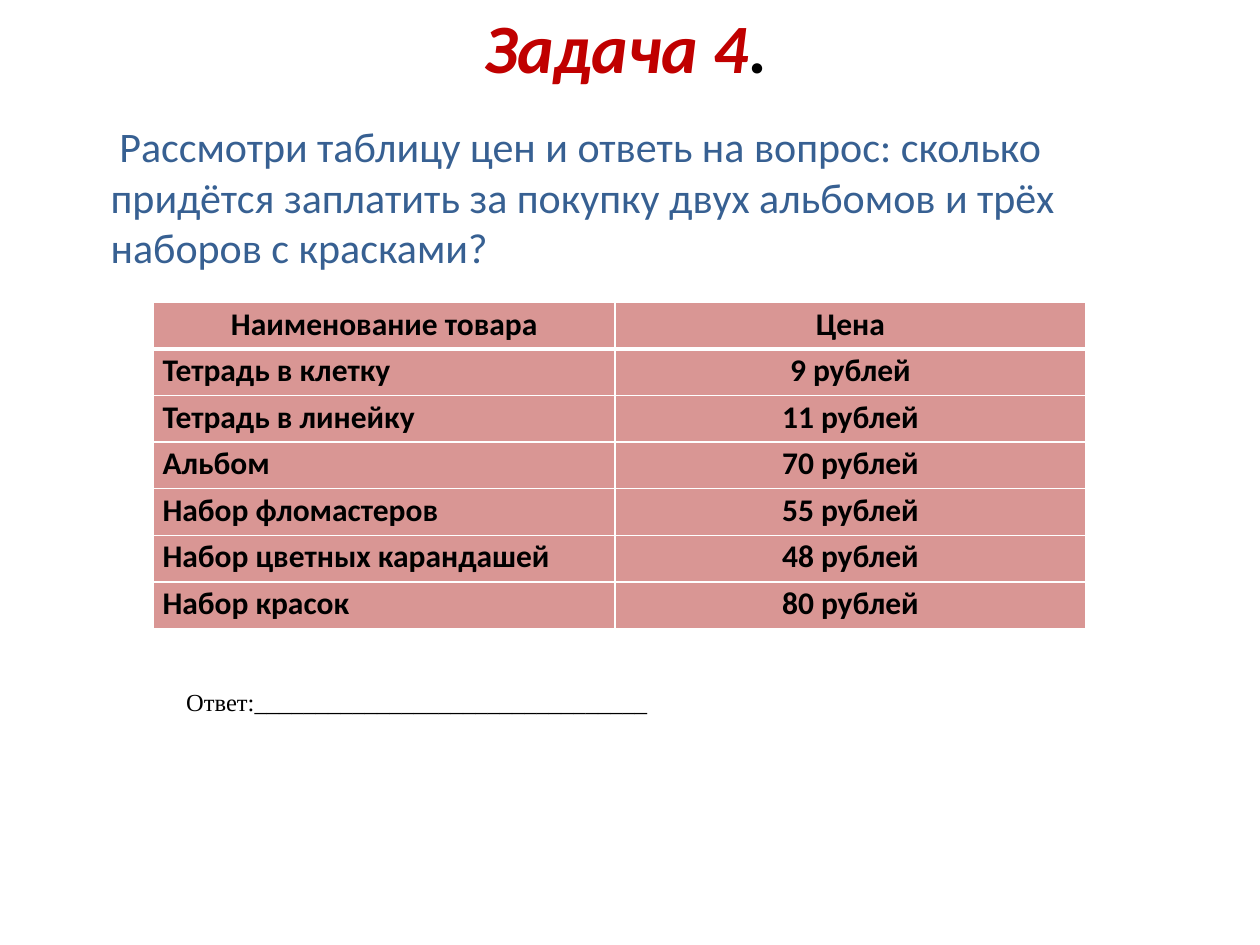
"""Build the price table task slide."""
from typing import Any, NamedTuple

from lxml import etree
from pptx import Presentation
from pptx.dml.color import RGBColor
from pptx.enum.text import MSO_ANCHOR, PP_ALIGN
from pptx.oxml.ns import qn
from pptx.util import Inches, Pt

LEFT, CENTER = PP_ALIGN.LEFT, PP_ALIGN.CENTER
TOP, MIDDLE = MSO_ANCHOR.TOP, MSO_ANCHOR.MIDDLE
BLACK = RGBColor(0x00, 0x00, 0x00)
WHITE = RGBColor(0xFF, 0xFF, 0xFF)
RED = RGBColor(0xC0, 0x00, 0x00)
BLUE = RGBColor(0x37, 0x60, 0x92)
PINK = RGBColor(0xD9, 0x96, 0x94)

TITLE_FONT = {"name": "Calibri", "size": Pt(39.6), "bold": True, "italic": True}
TASK_FONT = {"name": "Calibri", "size": Pt(24)}
CELL_FONT = {"name": "Calibri", "size": Pt(18), "bold": True}
ANSWER_FONT = {"name": "Times New Roman", "size": Pt(14)}
CELL_FORMAT = {
    "margin_left": Inches(0.07), "margin_right": Inches(0.07),
    "margin_top": 0, "margin_bottom": 0, "vertical_anchor": TOP,
}
COL_WIDTHS = (3.66, 3.74)
ROW_HEIGHT = 0.37
LINE_SPACING = 1.07


class Price(NamedTuple):
    item: str
    cost: str


HEADER = Price("Наименование товара", "Цена")
PRICES = [
    Price("Тетрадь в клетку", "9 рублей"),
    Price("Тетрадь в линейку", "11 рублей"),
    Price("Альбом", "70 рублей"),
    Price("Набор фломастеров", "55 рублей"),
    Price("Набор цветных карандашей", "48 рублей"),
    Price("Набор красок", "80 рублей"),
]


def set_attrs(obj: Any, values: dict) -> None:
    for name, value in values.items():
        setattr(obj, name, value)


def add_run(p: Any, text: str, font: dict, color: RGBColor) -> None:
    r = p.add_run()
    r.text = text
    set_attrs(r.font, font)
    r.font.color.rgb = color


def add_text(slide: Any, box: tuple, text: str, font: dict, color: RGBColor,
             anchor: Any) -> Any:
    sp = slide.shapes.add_textbox(*map(Inches, box))
    tf = sp.text_frame
    set_attrs(tf, {"word_wrap": True, "vertical_anchor": anchor})
    p = tf.paragraphs[0]
    add_run(p, text, font, color)
    return p


def set_borders(cell: Any, widths: dict) -> None:
    tc_pr = cell._tc.get_or_add_tcPr()
    for side, width in widths.items():
        ln = etree.SubElement(tc_pr, qn(f"a:ln{side}"), w=str(Pt(width)))
        fill = etree.SubElement(ln, qn("a:solidFill"))
        etree.SubElement(fill, qn("a:srgbClr"), val=str(WHITE))


def add_price_table(slide: Any, left: float, top: float) -> None:
    rows = [HEADER, *PRICES]
    table = slide.shapes.add_table(
        len(rows), len(COL_WIDTHS), Inches(left), Inches(top),
        Inches(sum(COL_WIDTHS)), Inches(ROW_HEIGHT * len(rows))).table
    for col, width in zip(table.columns, COL_WIDTHS):
        col.width = Inches(width)
    for i, price in enumerate(rows):
        table.rows[i].height = Inches(ROW_HEIGHT)
        for j, text in enumerate(price):
            cell = table.cell(i, j)
            set_attrs(cell, CELL_FORMAT)
            set_borders(cell, {"L": 1, "R": 1, "T": 3 if i == 1 else 1,
                               "B": 3 if i == 0 else 1})
            cell.fill.solid()
            cell.fill.fore_color.rgb = PINK
            p = cell.text_frame.paragraphs[0]
            p.alignment = LEFT if i and j == 0 else CENTER
            p.line_spacing = LINE_SPACING
            add_run(p, text, CELL_FONT, BLACK)


def main() -> None:
    prs = Presentation()
    prs.slide_width, prs.slide_height = Inches(10), Inches(7.5)
    slide = prs.slides.add_slide(prs.slide_layouts[5])

    title = slide.shapes.title
    set_attrs(title, {"left": Inches(0.47), "top": 0,
                      "width": Inches(9), "height": Inches(0.72)})
    title.text_frame.vertical_anchor = MIDDLE
    p = title.text_frame.paragraphs[0]
    p.alignment = CENTER
    add_run(p, "Задача 4", TITLE_FONT, RED)
    add_run(p, ".", TITLE_FONT, BLACK)

    p = add_text(slide, (0.78, 0.91, 8.44, 5.81),
                 "Рассмотри таблицу цен и ответь на вопрос: сколько придётся "
                 "заплатить за покупку двух альбомов и трёх наборов с красками?",
                 TASK_FONT, BLUE, TOP)
    p._p.get_or_add_pPr().set("indent", str(Inches(0.07)))

    add_price_table(slide, 1.22, 2.4)

    p = add_text(slide, (1.38, 5.13, 5, 0.86), "Ответ:" + "_" * 32,
                 ANSWER_FONT, BLACK, MIDDLE)
    p.line_spacing = LINE_SPACING

    prs.save("out.pptx")


if __name__ == "__main__":
    main()
